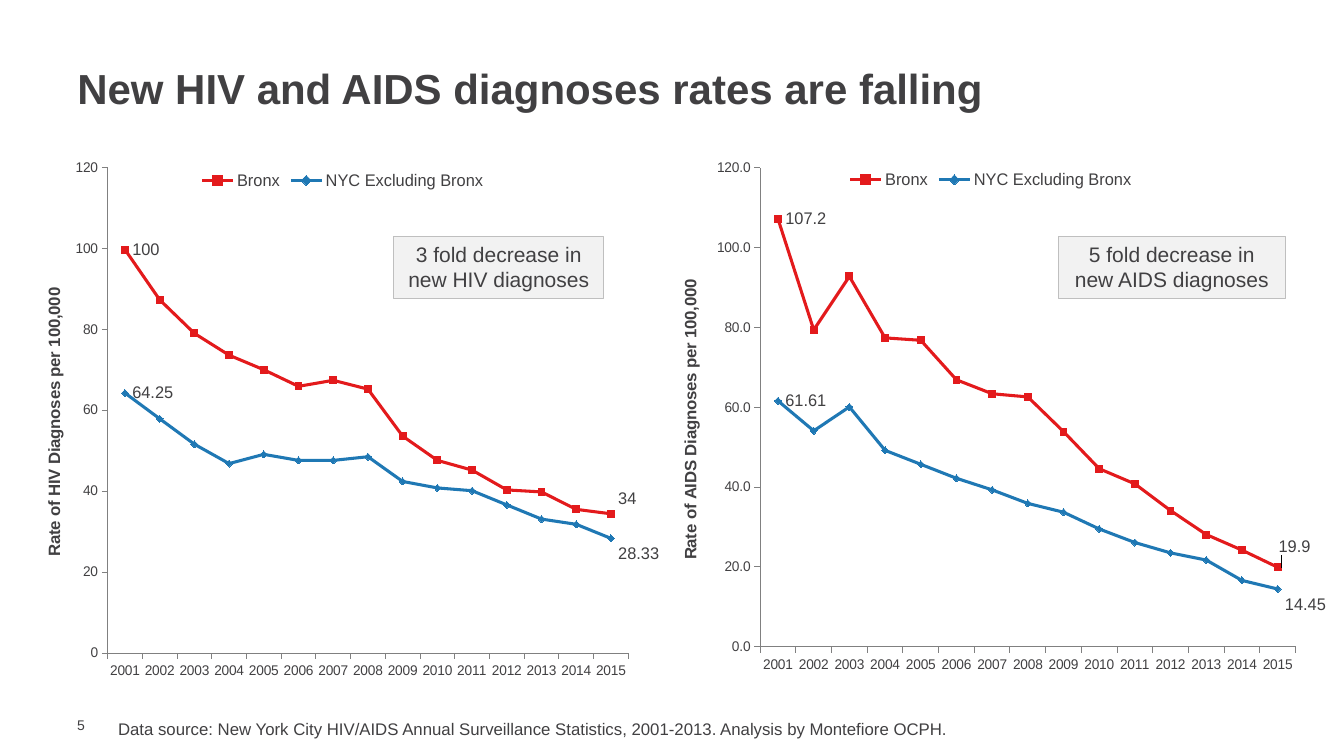
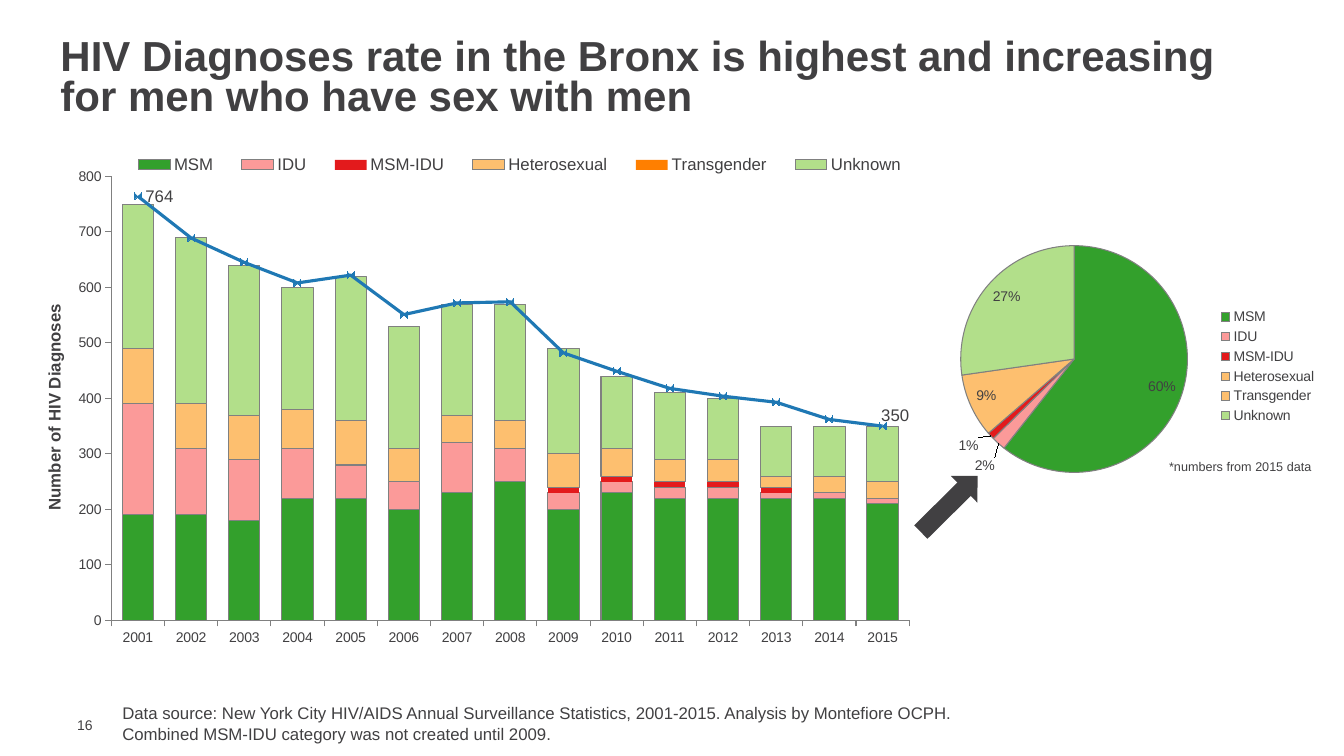
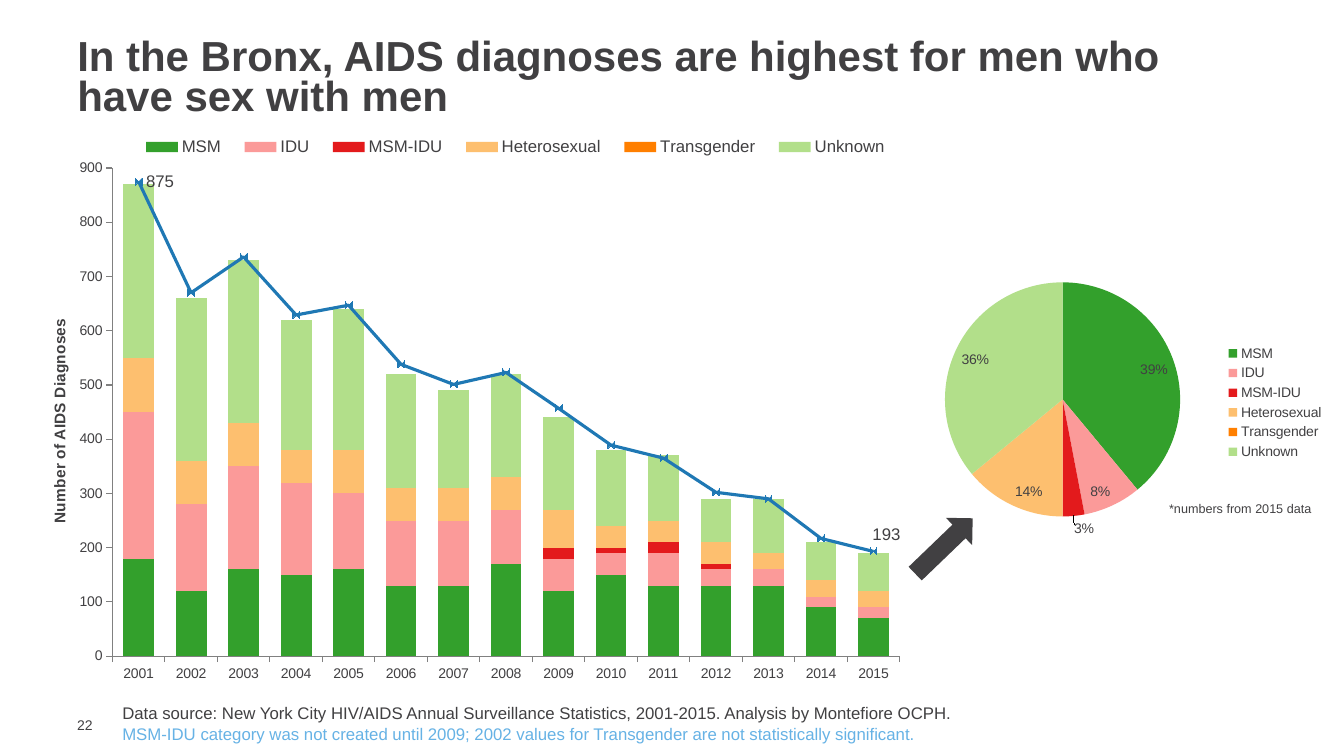
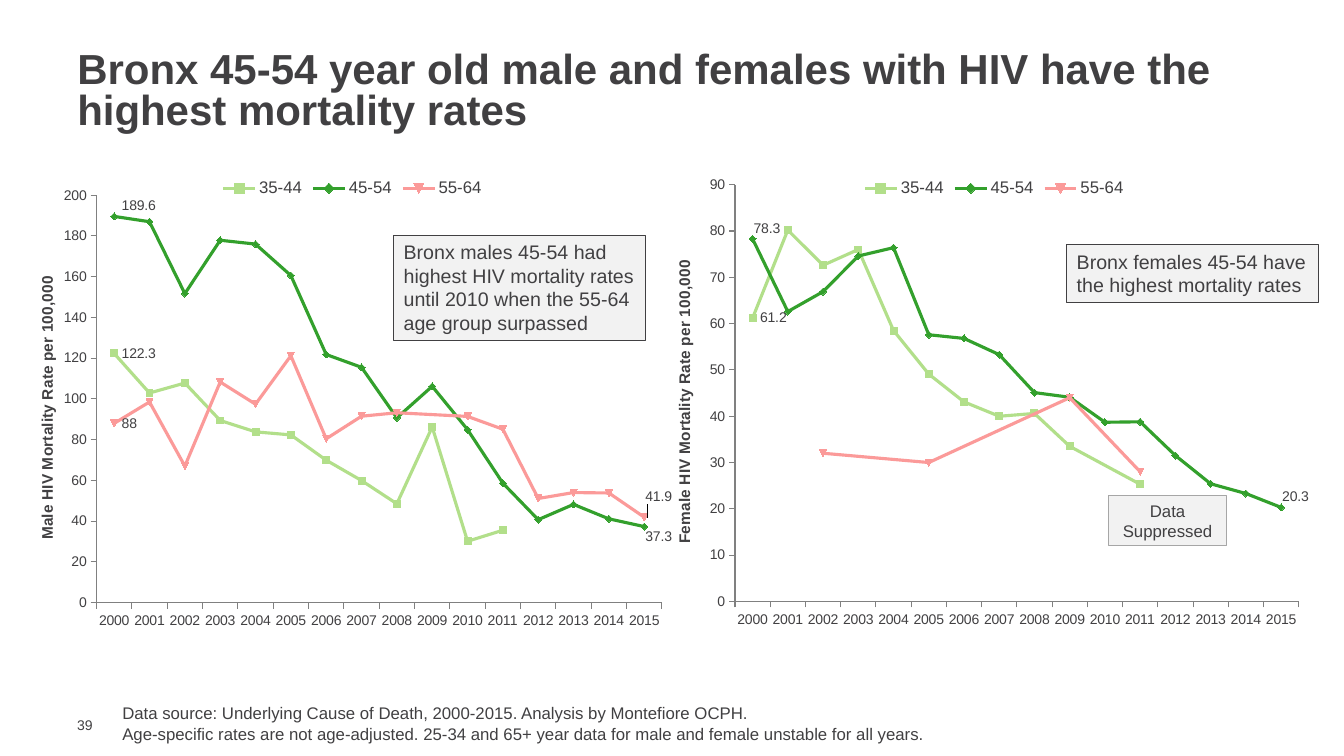
from dataclasses import dataclass
from typing import NamedTuple, Optional

from lxml.etree import SubElement
from pptx import Presentation
from pptx.chart.data import CategoryChartData
from pptx.dml.color import RGBColor
from pptx.enum.chart import (XL_CHART_TYPE, XL_LABEL_POSITION,
                             XL_LEGEND_POSITION, XL_MARKER_STYLE, XL_TICK_MARK)
from pptx.enum.shapes import MSO_SHAPE
from pptx.enum.text import MSO_ANCHOR, MSO_AUTO_SIZE, PP_ALIGN
from pptx.oxml import parse_xml
from pptx.oxml.ns import nsdecls, qn
from pptx.util import Emu, Pt

PX = 9525
FONT = "Arial"
INK = RGBColor(0x41, 0x40, 0x42)
PALE = RGBColor(0xF2, 0xF2, 0xF2)
SILVER = RGBColor(0xBF, 0xBF, 0xBF)
MID_GRAY = RGBColor(0xA6, 0xA6, 0xA6)
GRAY = RGBColor(0x80, 0x80, 0x80)
SKY = RGBColor(0x66, 0xB2, 0xE5)
RED = RGBColor(0xE3, 0x1A, 0x1C)
BLUE = RGBColor(0x1F, 0x78, 0xB4)
GREEN = RGBColor(0x33, 0xA0, 0x2C)
LIME = RGBColor(0xB2, 0xDF, 0x8A)
PINK = RGBColor(0xFB, 0x9A, 0x99)
PEACH = RGBColor(0xFD, 0xBF, 0x6F)
ORANGE = RGBColor(0xFF, 0x7F, 0x00)

YEARS_2000 = [str(year) for year in range(2000, 2016)]
YEARS_2001 = YEARS_2000[1:]
RISKS = ["MSM", "IDU", "MSM-IDU", "Heterosexual", "Transgender", "Unknown"]
RISK_COLORS = [GREEN, PINK, RED, PEACH, ORANGE, LIME]
SOURCE = ("Data source: New York City HIV/AIDS Annual Surveillance Statistics, "
          "2001-{}. Analysis by Montefiore OCPH.")


class Box(NamedTuple):
    left: int
    top: int
    width: int
    height: int

    def emu(self) -> list[Emu]:
        return [Emu(n * PX) for n in self]


class Label(NamedTuple):
    index: int
    dx: float = 0
    dy: float = 0


@dataclass
class Line:
    name: str
    color: RGBColor
    values: list[Optional[float]]
    labels: tuple[Label, ...] = ()
    number_format: str = "General"


@dataclass
class Axis:
    title: str
    title_size: int
    maximum: int
    unit: int
    number_format: str = "General"


@dataclass
class LineChart:
    box: Box
    plot: Box
    axis: Axis
    categories: list[str]
    lines: list[Line]
    label_size: int


@dataclass
class ComboChart:
    box: Box
    plot: Box
    legend: Box
    axis: Axis
    stacks: list[list[int]]
    total: Line
    outlined: bool


@dataclass
class PieChart:
    box: Box
    plot: Box
    values: list[int]
    colors: list[RGBColor]
    outside: tuple[Label, ...]
    outlined: bool


@dataclass
class Callout:
    box: Box
    text: str
    size: int
    border: RGBColor
    align: PP_ALIGN = PP_ALIGN.LEFT


def set_font(font, size: int, color: RGBColor = INK, bold: bool = False) -> None:
    font.name = FONT
    font.size = Pt(size)
    font.bold = bold
    font.color.rgb = color


def fill_text(tf, text: str, size: int, color: RGBColor = INK, bold: bool = False) -> None:
    tf.text = text
    tf.word_wrap = True
    for p in tf.paragraphs:
        for r in p.runs:
            set_font(r.font, size, color, bold)


def add_text(s, box: Box, text: str, size: int):
    tf = s.shapes.add_textbox(*box.emu()).text_frame
    fill_text(tf, text, size)
    return tf


def add_page(prs, number: int, title: str, title_box: Box, source_box: Box, source: str):
    s = prs.slides.add_slide(prs.slide_layouts[5])
    sp = s.shapes.title
    sp.left, sp.top, sp.width, sp.height = title_box.emu()
    tf = sp.text_frame
    fill_text(tf, title, 30, bold=True)
    tf.auto_size = MSO_AUTO_SIZE.NONE
    tf.vertical_anchor = MSO_ANCHOR.MIDDLE
    tf.paragraphs[0].alignment = PP_ALIGN.LEFT
    tf.paragraphs[0].line_spacing = 0.8
    number_tf = add_text(s, Box(64, 682, 41, 16), str(number), 10)
    number_tf.vertical_anchor = MSO_ANCHOR.MIDDLE
    number_tf.margin_top = number_tf.margin_right = number_tf.margin_bottom = 0
    return s, add_text(s, source_box, source, 12)


def add_callout(s, callout: Callout) -> None:
    sp = s.shapes.add_shape(MSO_SHAPE.RECTANGLE, *callout.box.emu())
    sp.shadow.inherit = False
    sp.fill.solid()
    sp.fill.fore_color.rgb = PALE
    sp.line.color.rgb = callout.border
    sp.line.width = Pt(0.75)
    fill_text(sp.text_frame, callout.text, callout.size)
    sp.text_frame.vertical_anchor = MSO_ANCHOR.TOP
    sp.text_frame.paragraphs[0].alignment = callout.align


def add_arrow(s, box: Box, rotation: float) -> None:
    sp = s.shapes.add_shape(MSO_SHAPE.RIGHT_ARROW, *box.emu())
    sp.shadow.inherit = False
    sp.rotation = rotation
    sp.fill.solid()
    sp.fill.fore_color.rgb = INK
    sp.line.fill.background()


def manual_layout(parts: list[tuple[str, object]]):
    layout = parse_xml(f'<c:layout {nsdecls("c")}><c:manualLayout/></c:layout>')
    for tag, value in parts:
        SubElement(layout[0], qn(f"c:{tag}")).set("val", str(value))
    return layout


def layout_within(chart_box: Box, inner: Box, is_plot: bool = False):
    target = [("layoutTarget", "inner")] if is_plot else []
    return manual_layout(target + [
        ("xMode", "edge"), ("yMode", "edge"),
        ("x", (inner.left - chart_box.left) / chart_box.width),
        ("y", (inner.top - chart_box.top) / chart_box.height),
        ("w", inner.width / chart_box.width),
        ("h", inner.height / chart_box.height)])


def add_chart(s, kind: XL_CHART_TYPE, box: Box, plot: Box, data: CategoryChartData,
              legend: XL_LEGEND_POSITION, legend_size: int):
    chart = s.shapes.add_chart(kind, *box.emu(), data).chart
    set_font(chart.font, 10)
    chart.has_title = False
    chart.has_legend = True
    chart.legend.position = legend
    chart.legend.include_in_layout = False
    set_font(chart.legend.font, legend_size)
    area = chart._chartSpace.chart.plotArea
    for old in area.findall(qn("c:layout")):
        area.remove(old)
    area.insert(0, layout_within(box, plot, True))
    for blanks in chart._chartSpace.iter(qn("c:dispBlanksAs")):
        blanks.set("val", "span")
    return chart


def style_axes(chart, axis: Axis) -> None:
    for ax in (chart.category_axis, chart.value_axis):
        ax.has_major_gridlines = False
        ax.major_tick_mark = XL_TICK_MARK.OUTSIDE
        ax.minor_tick_mark = XL_TICK_MARK.NONE
        ax.format.line.color.rgb = GRAY
        ax.format.line.width = Pt(0.75)
        set_font(ax.tick_labels.font, 10)
    value = chart.value_axis
    value.minimum_scale = 0
    value.maximum_scale = axis.maximum
    value.major_unit = axis.unit
    value.tick_labels.number_format = axis.number_format
    value.tick_labels.number_format_is_linked = False
    fill_text(value.axis_title.text_frame, axis.title, axis.title_size, bold=True)
    body = value.axis_title._element.xpath(".//a:bodyPr")[0]
    body.set("rot", "-5400000")
    body.set("vert", "horz")


def label_point(series, label: Label, number_format: str, size: int,
                position: XL_LABEL_POSITION) -> None:
    data_label = series.points[label.index].data_label
    set_font(data_label.font, size)
    data_label.position = position
    element = series._element.xpath(f"c:dLbls/c:dLbl[c:idx/@val='{label.index}']")[0]
    number = parse_xml(f'<c:numFmt {nsdecls("c")} sourceLinked="0"/>')
    number.set("formatCode", number_format)
    element.find(qn("c:txPr")).addprevious(number)
    if label.dx or label.dy:
        element.find(qn("c:idx")).addnext(manual_layout([("x", label.dx), ("y", label.dy)]))


def style_line(series, line: Line, label_size: int) -> None:
    series.smooth = False
    series.format.line.color.rgb = line.color
    series.format.line.width = Pt(2.25)
    marker = series.marker
    marker.style = XL_MARKER_STYLE.AUTOMATIC
    marker.size = 5
    marker.format.fill.solid()
    marker.format.fill.fore_color.rgb = line.color
    marker.format.line.color.rgb = line.color
    if line.labels:
        series.data_labels.show_value = False
    for label in line.labels:
        label_point(series, label, line.number_format, label_size, XL_LABEL_POSITION.RIGHT)


def add_line_chart(s, trend: LineChart) -> None:
    data = CategoryChartData()
    data.categories = trend.categories
    for line in trend.lines:
        data.add_series(line.name, line.values)
    chart = add_chart(s, XL_CHART_TYPE.LINE_MARKERS, trend.box, trend.plot, data,
                      XL_LEGEND_POSITION.TOP, 12)
    style_axes(chart, trend.axis)
    chart.plots[0].vary_by_categories = False
    for series, line in zip(chart.plots[0].series, trend.lines):
        style_line(series, line, trend.label_size)


def move_last_to_line(chart, maximum: int) -> None:
    area = chart._chartSpace.chart.plotArea
    bars = area.find(qn("c:barChart"))
    total = bars.findall(qn("c:ser"))[-1]
    for flag in total.findall(qn("c:invertIfNegative")):
        total.remove(flag)
    ns = nsdecls("c")
    lines = parse_xml(
        f'<c:lineChart {ns}><c:grouping val="standard"/><c:varyColors val="0"/>'
        '<c:marker val="1"/><c:axId val="5001"/><c:axId val="5002"/></c:lineChart>')
    lines.insert(2, total)
    bars.addnext(lines)
    last = area.findall(qn("c:valAx"))[-1]
    for tag, own, other, side, limits in (
            ("valAx", 5002, 5001, "r", f'<c:max val="{maximum}"/><c:min val="0"/>'),
            ("catAx", 5001, 5002, "b", "")):
        crosses = "max" if tag == "valAx" else "autoZero"
        last.addnext(parse_xml(
            f'<c:{tag} {ns}><c:axId val="{own}"/><c:scaling><c:orientation val="minMax"/>'
            f'{limits}</c:scaling><c:delete val="1"/><c:axPos val="{side}"/>'
            f'<c:crossAx val="{other}"/><c:crosses val="{crosses}"/></c:{tag}>'))


def arrange_legend(chart, combo: ComboChart) -> None:
    position = chart.legend._element.find(qn("c:legendPos"))
    for old in chart.legend._element.findall(qn("c:layout")):
        chart.legend._element.remove(old)
    position.addnext(layout_within(combo.box, combo.legend))
    position.addnext(parse_xml(
        f'<c:legendEntry {nsdecls("c")}><c:idx val="{len(RISKS)}"/>'
        '<c:delete val="1"/></c:legendEntry>'))


def paint(target, color: RGBColor, outlined: bool) -> None:
    target.format.fill.solid()
    target.format.fill.fore_color.rgb = color
    if outlined:
        target.format.line.color.rgb = GRAY
        target.format.line.width = Pt(0.75)
    else:
        target.format.line.fill.background()


def add_combo_chart(s, combo: ComboChart) -> None:
    data = CategoryChartData()
    data.categories = YEARS_2001
    for name, values in zip(RISKS, combo.stacks):
        data.add_series(name, values)
    data.add_series(combo.total.name, combo.total.values)
    chart = add_chart(s, XL_CHART_TYPE.COLUMN_STACKED, combo.box, combo.plot, data,
                      XL_LEGEND_POSITION.TOP, 12)
    style_axes(chart, combo.axis)
    move_last_to_line(chart, combo.axis.maximum)
    arrange_legend(chart, combo)
    bars, lines = chart.plots
    bars.vary_by_categories = False
    bars.gap_width = 70
    bars.overlap = 100
    for series, name, color in zip(bars.series, RISKS, RISK_COLORS):
        paint(series, color, combo.outlined and name not in ("MSM-IDU", "Transgender"))
    style_line(lines.series[0], combo.total, 12)


def add_pie_chart(s, pie: PieChart) -> None:
    data = CategoryChartData()
    data.categories = RISKS
    data.add_series("Series 1", pie.values)
    chart = add_chart(s, XL_CHART_TYPE.PIE, pie.box, pie.plot, data,
                      XL_LEGEND_POSITION.RIGHT, 10)
    chart.plots[0].vary_by_categories = True
    series = chart.plots[0].series[0]
    for i, color in enumerate(pie.colors):
        paint(series.points[i], color, pie.outlined)
    percent = '0"%";;'
    labels = series.data_labels
    labels.show_value = True
    labels.number_format = percent
    labels.number_format_is_linked = False
    labels.position = XL_LABEL_POSITION.INSIDE_END
    set_font(labels.font, 10)
    for label in pie.outside:
        label_point(series, label, percent, 10, XL_LABEL_POSITION.OUTSIDE_END)


def build_rates(prs) -> None:
    s, _ = add_page(prs, 5, "New HIV and AIDS diagnoses rates are falling",
                    Box(64, 64, 1152, 48), Box(103, 680, 932, 29), SOURCE.format(2013))
    add_line_chart(s, LineChart(
        Box(639, 152, 624, 496), Box(726, 160, 522, 456),
        Axis("Rate of AIDS Diagnoses per 100,000", 12, 120, 20, "0.0"), YEARS_2001,
        [Line("Bronx", RED, [107.2, 79.4, 92.8, 77.4, 76.8, 66.9, 63.4, 62.6, 53.9, 44.6,
                             40.8, 34.1, 28.1, 24.2, 19.9],
              (Label(0), Label(14, -0.01, -0.04)), "0.0"),
         Line("NYC Excluding Bronx", BLUE,
              [61.61, 54.1, 60.1, 49.2, 45.7, 42.2, 39.3, 35.9, 33.7, 29.5,
               26.1, 23.5, 21.7, 16.6, 14.45],
              (Label(0), Label(14, 0, 0.03)), "0.00")], 12))
    add_line_chart(s, LineChart(
        Box(39, 152, 589, 496), Box(104, 159, 508, 463),
        Axis("Rate of HIV Diagnoses per 100,000", 12, 120, 20, "0"), YEARS_2001,
        [Line("Bronx", RED, [99.7, 87.3, 79, 73.6, 70, 65.9, 67.4, 65.2, 53.6, 47.6,
                             45.2, 40.3, 39.8, 35.5, 34.4],
              (Label(0), Label(14, 0, -0.03)), "0"),
         Line("NYC Excluding Bronx", BLUE,
              [64.25, 57.9, 51.6, 46.8, 49.1, 47.6, 47.6, 48.5, 42.4, 40.8,
               40.1, 36.6, 33.1, 31.8, 28.33],
              (Label(0), Label(14, 0, 0.03)), "0.00")], 12))
    for left, width, fold, disease in ((375, 200, 3, "HIV"), (1008, 216, 5, "AIDS")):
        add_callout(s, Callout(Box(left, 225, width, 59),
                               f"{fold} fold decrease in new {disease} diagnoses",
                               15, SILVER, PP_ALIGN.CENTER))


def build_hiv_risk(prs) -> None:
    s, _ = add_page(
        prs, 16,
        "HIV Diagnoses rate in the Bronx is highest and increasing for men who have sex with men",
        Box(48, 32, 1152, 87), Box(107, 665, 932, 48),
        SOURCE.format(2015) + "\nCombined MSM-IDU category was not created until 2009.")
    add_text(s, Box(1104, 432, 160, 24), "*numbers from 2015 data", 9)
    add_combo_chart(s, ComboChart(
        Box(39, 136, 843, 492), Box(106, 168, 760, 423), Box(110, 146, 770, 22),
        Axis("Number of HIV Diagnoses", 12, 800, 100),
        [[190, 190, 180, 220, 220, 200, 230, 250, 200, 230, 220, 220, 220, 220, 210],
         [200, 120, 110, 90, 60, 50, 90, 60, 30, 20, 20, 20, 10, 10, 10],
         [0] * 8 + [10] * 5 + [0] * 2,
         [100, 80, 80, 70, 80, 60, 50, 50, 60, 50, 40, 40, 20, 30, 30],
         [0] * 15,
         [260, 300, 270, 220, 260, 220, 200, 210, 190, 130, 120, 110, 90, 90, 100]],
        Line("Male HIV Diagnosis", BLUE,
             [764, 689, 645, 608, 622, 551, 572, 574, 482, 449, 418, 404, 393, 362, 350],
             (Label(0), Label(14, -0.01, -0.02))), True))
    add_pie_chart(s, PieChart(
        Box(877, 233, 387, 232), Box(915, 234, 216, 216),
        [60, 2, 1, 9, 0, 27], [GREEN, PINK, RED, PEACH, PEACH, LIME],
        (Label(1, 0, 0.04), Label(2, -0.02, -0.01)), True))
    add_arrow(s, Box(866, 462, 76, 36), 315.3)


def build_aids_risk(prs) -> None:
    s, source = add_page(
        prs, 22, "In the Bronx, AIDS diagnoses are highest for men who have sex with men",
        Box(64, 32, 1152, 87), Box(107, 665, 932, 48),
        SOURCE.format(2015) + "\nMSM-IDU category was not created until 2009; "
        "2002 values for Transgender are not statistically significant.")
    source.paragraphs[1].runs[0].font.color.rgb = SKY
    add_text(s, Box(1104, 472, 160, 24), "*numbers from 2015 data", 9)
    add_combo_chart(s, ComboChart(
        Box(44, 128, 816, 538), Box(107, 160, 750, 465), Box(122, 129, 738, 22),
        Axis("Number of AIDS Diagnoses", 11, 900, 100),
        [[180, 120, 160, 150, 160, 130, 130, 170, 120, 150, 130, 130, 130, 90, 70],
         [270, 160, 190, 170, 140, 120, 120, 100, 60, 40, 60, 30, 30, 20, 20],
         [0] * 8 + [20, 10, 20, 10] + [0] * 3,
         [100, 80, 80, 60, 80, 60, 60, 60, 70, 40, 40, 40, 30, 30, 30],
         [0] * 15,
         [320, 300, 300, 240, 260, 210, 180, 190, 170, 140, 120, 80, 100, 70, 70]],
        Line("AIDS Diagnosis", BLUE,
             [875, 670, 736, 629, 647, 538, 501, 523, 457, 389, 365, 302, 290, 217, 193],
             (Label(0), Label(14, -0.01, -0.03))), False))
    add_pie_chart(s, PieChart(
        Box(845, 256, 426, 256), Box(900, 269, 224, 224),
        [39, 8, 3, 14, 0, 36], RISK_COLORS, (Label(2, 0, 0.01),), False))
    add_arrow(s, Box(861, 502, 76, 36), 316.1)


def build_mortality(prs) -> None:
    s, _ = add_page(
        prs, 39, "Bronx 45-54 year old male and females with HIV have the highest mortality rates",
        Box(64, 45, 1152, 87), Box(107, 665, 932, 48),
        "Data source: Underlying Cause of Death, 2000-2015. Analysis by Montefiore OCPH.\n"
        "Age-specific rates are not age-adjusted. 25-34 and 65+ year data for male and female "
        "unstable for all years.")
    add_line_chart(s, LineChart(
        Box(32, 160, 608, 496), Box(92, 186, 539, 388),
        Axis("Male HIV Mortality Rate per 100,000", 11, 200, 20), YEARS_2000,
        [Line("35-44", LIME, [122.3, 102.9, 107.8, 89.4, 83.8, 82.3, 69.9, 59.9, 48.5, 86.2,
                              30.1, 35.5] + [None] * 4, (Label(0),)),
         Line("45-54", GREEN, [189.6, 187, 151.7, 177.9, 176, 160.6, 121.8, 115.5, 90.7, 106.2,
                               84.9, 58.6, 40.7, 48.2, 41.1, 37.3],
              (Label(0, 0, -0.02), Label(15, -0.01, 0.02))),
         Line("55-64", PINK, [88, 98.5, 67, 108.3, 97.4, 121.2, 80.4, 91.5, 93.2, None,
                              91.4, 85.1, 51.1, 54, 53.8, 41.9],
              (Label(0), Label(15, -0.01, -0.04)))], 10))
    add_line_chart(s, LineChart(
        Box(639, 160, 616, 496), Box(700, 176, 537, 397),
        Axis("Female HIV Mortality Rate per 100,000", 11, 90, 10), YEARS_2000,
        [Line("35-44", LIME, [61.2, 80.2, 72.6, 76, 58.5, 49.1, 43.1, 40, 40.6, 33.5,
                              None, 25.3] + [None] * 4, (Label(0),)),
         Line("45-54", GREEN, [78.3, 62.6, 66.9, 74.6, 76.4, 57.6, 56.8, 53.3, 45.1, 44.1,
                               38.7, 38.8, 31.5, 25.4, 23.3, 20.3],
              (Label(0, -0.01, -0.02), Label(15, -0.01, -0.02))),
         Line("55-64", PINK, [None, None, 32, None, None, 30, None, None, None, 44,
                              None, 28] + [None] * 4)], 10))
    for callout in (
            Callout(Box(375, 224, 240, 100), "Bronx males 45-54 had highest HIV mortality rates "
                    "until 2010 when the 55-64 age group surpassed", 14, INK),
            Callout(Box(1016, 233, 240, 55),
                    "Bronx females 45-54 have the highest mortality rates", 14, INK),
            Callout(Box(1056, 472, 112, 48), "Data Suppressed", 12, MID_GRAY, PP_ALIGN.CENTER)):
        add_callout(s, callout)


def main() -> None:
    prs = Presentation()
    prs.slide_width, prs.slide_height = Emu(1280 * PX), Emu(720 * PX)
    for build in (build_rates, build_hiv_risk, build_aids_risk, build_mortality):
        build(prs)
    prs.save("out.pptx")


if __name__ == "__main__":
    main()
